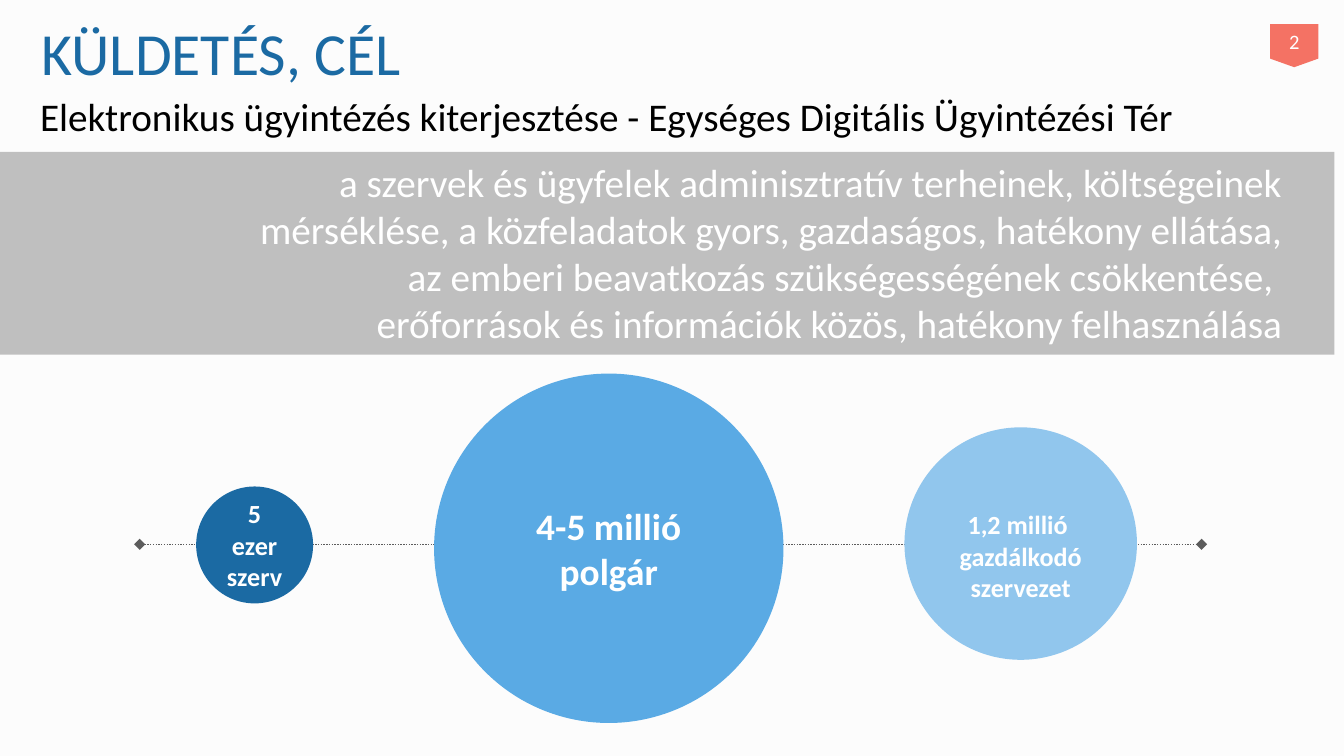
"""Build the mission and goal slide with its three audience circles."""
from lxml.etree import SubElement
from pptx import Presentation
from pptx.dml.color import RGBColor
from pptx.enum.dml import MSO_LINE
from pptx.enum.shapes import MSO_CONNECTOR, MSO_SHAPE as Shape
from pptx.enum.text import MSO_ANCHOR as Anchor, PP_ALIGN as Align
from pptx.oxml.ns import qn
from pptx.util import Inches, Pt

COLORS = {
    "background": "FCFCFC", "axis": "5C5C5C", "band": "BFBFBF",
    "black": "000000", "white": "FFFFFF", "navy": "1B6AA3",
    "blue": "5AAAE4", "pale": "91C6ED", "coral": "F47264",
}


def add_shape(kind, left, top, width, height, color):
    shape = page.shapes.add_shape(
        kind, Inches(left), Inches(top), Inches(width), Inches(height))
    shape.shadow.inherit = False
    shape.fill.solid()
    shape.fill.fore_color.rgb = RGBColor.from_string(COLORS[color])
    shape.line.fill.background()
    return shape


def write(box, lines, size, color, align=Align.LEFT, anchor=Anchor.MIDDLE,
          bold=False, side=0.1, top=0.05):
    frame = box.text_frame
    frame.word_wrap = True
    frame.vertical_anchor = anchor
    frame.margin_left = frame.margin_right = Inches(side)
    frame.margin_top, frame.margin_bottom = Inches(top), Inches(0.05)
    for index, line in enumerate(lines):
        para = frame.add_paragraph() if index else frame.paragraphs[0]
        para.alignment = align
        span = para.add_run()
        span.text = line
        span.font.name = "Calibri"
        span.font.size = Pt(size)
        span.font.bold = bold
        span.font.color.rgb = RGBColor.from_string(COLORS[color])


deck = Presentation()
deck.slide_width, deck.slide_height = Inches(10), Inches(10 * 9 / 16)
page = deck.slides.add_slide(deck.slide_layouts[6])
page.background.fill.solid()
page.background.fill.fore_color.rgb = RGBColor.from_string(COLORS["background"])

axis = page.shapes.add_connector(
    MSO_CONNECTOR.STRAIGHT, Inches(1.04), Inches(4.05), Inches(8.94), Inches(4.05))
axis.line.color.rgb = RGBColor.from_string(COLORS["axis"])
axis.line.width = Pt(0.75)
axis.line.dash_style = MSO_LINE.ROUND_DOT
outline = axis.line._get_or_add_ln()
for end in ("a:headEnd", "a:tailEnd"):
    SubElement(outline, qn(end), type="diamond")
SubElement(axis._element.spPr, qn("a:effectLst"))

add_shape(Shape.RECTANGLE, -0.07, 1.13, 10, 1.51, "band")

goals = [
    "a szervek és ügyfelek adminisztratív terheinek, költségeinek mérséklése, "
    "a közfeladatok gyors, gazdaságos, hatékony ellátása,",
    "az emberi beavatkozás szükségességének csökkentése, ",
    "erőforrások és információk közös, hatékony felhasználása",
]
subtitle = "Elektronikus ügyintézés kiterjesztése - Egységes Digitális Ügyintézési Tér"
texts = [
    (0.2, 0.56, 9.47, 0.6, [subtitle], 21, "black", Align.LEFT, Anchor.MIDDLE),
    (0.21, 0, 9.72, 0.77, ["KÜLDETÉS, CÉL"], 32, "navy", Align.LEFT, Anchor.MIDDLE),
    (0.99, 1.13, 8.65, 1.51, goals, 21, "white", Align.RIGHT, Anchor.TOP),
]
for left, top, width, height, lines, size, color, align, anchor in texts:
    box = page.shapes.add_textbox(
        Inches(left), Inches(top), Inches(width), Inches(height))
    write(box, lines, size, color, align, anchor)

badge = add_shape(Shape.FLOWCHART_OFFPAGE_CONNECTOR, 9.45, 0.18, 0.36, 0.32, "coral")
write(badge, ["2"], 11, "white", Align.CENTER, side=0)

circles = [
    (3.23, 2.78, 2.6, "blue", "4-5 millió polgár", 20, 0.1, 0.05),
    (1.46, 3.62, 0.87, "navy", "5 ezer szerv", 14, 0.08, 0.05),
    (6.73, 3.18, 1.73, "pale", "1,2 millió  gazdálkodó szervezet", 14, 0.1, 0.23),
]
for left, top, diameter, color, label, size, side, inset in circles:
    circle = add_shape(Shape.OVAL, left, top, diameter, diameter, color)
    write(circle, [label], size, "white", Align.CENTER, bold=True, side=side, top=inset)

deck.save("out.pptx")
